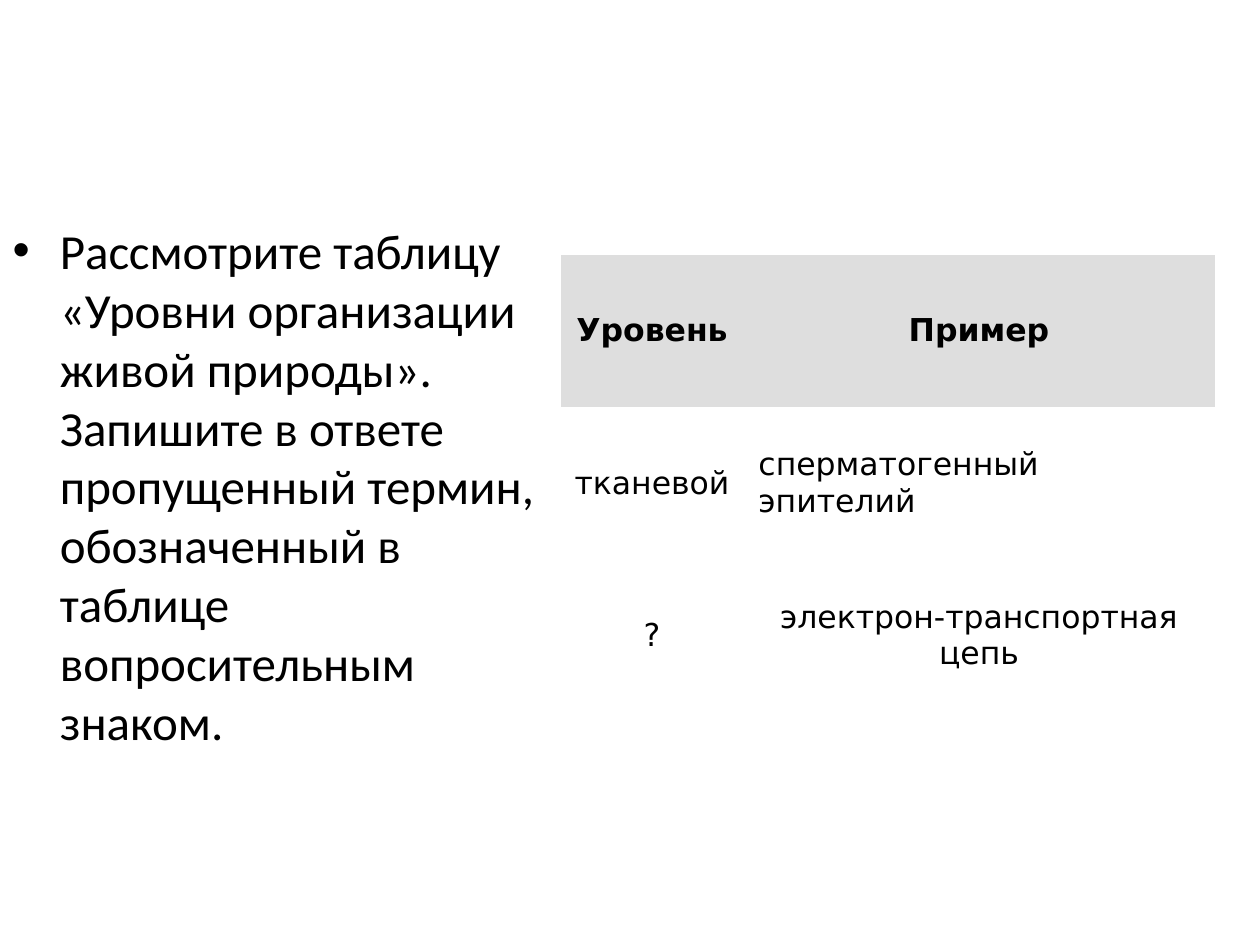
import pptx
import pptx.util
import pptx.dml.color
import pptx.enum.text

theme = {
    "text": pptx.dml.color.RGBColor.from_string("000000"),
    "header": pptx.dml.color.RGBColor.from_string("DEDEDE"),
    "cell": pptx.dml.color.RGBColor.from_string("FFFFFF"),
    "body_font": "Calibri",
    "table_font": "DejaVu Sans",
    "body_size": pptx.util.Pt(28),
    "table_size": pptx.util.Pt(18),
}
NO_STYLE_NO_GRID = "{2D5ABB26-0587-4C30-8999-92F81FD0307C}"
inch = pptx.util.Inches
align = pptx.enum.text.PP_ALIGN


def format_run(r, font, size, bold=False):
    r.font.name = font
    r.font.size = size
    r.font.bold = bold
    r.font.color.rgb = theme["text"]


prs = pptx.Presentation()
prs.slide_width, prs.slide_height = inch(10), inch(7.5)
s = prs.slides.add_slide(prs.slide_layouts[1])
title = s.shapes.title
title.element.getparent().remove(title.element)

body = s.placeholders[1]
body.left, body.top = 0, inch(1.7)
body.width, body.height = inch(4.42), inch(4.95)
tf = body.text_frame
tf.text = (
    "Рассмотрите таблицу «Уровни организации живой природы». "
    "Запишите в ответе пропущенный термин, обозначенный в таблице "
    "вопросительным знаком."
)
p = tf.paragraphs[0]
p.space_before = pptx.util.Pt(0)
format_run(p.runs[0], theme["body_font"], theme["body_size"])

rows = [
    ("Уровень", "Пример"),
    ("тканевой", "сперматогенный эпителий"),
    ("?", "электрон-транспортная цепь"),
]
col_widths = [inch(1.45), inch(3.74)]
col_margins = [inch(0.1), inch(0.12)]
row_height = inch(1.21)

frame = s.shapes.add_table(
    len(rows), len(col_widths), inch(4.45), inch(2.02),
    sum(col_widths), row_height * len(rows),
)
table = frame.table
table.horz_banding = False
table._tbl.tblPr[0].text = NO_STYLE_NO_GRID
for column, width in zip(table.columns, col_widths):
    column.width = width

for i, row in enumerate(rows):
    table.rows[i].height = row_height
    for j, text in enumerate(row):
        cell = table.cell(i, j)
        cell.fill.solid()
        cell.fill.fore_color.rgb = theme["header" if i == 0 else "cell"]
        cell.vertical_anchor = pptx.enum.text.MSO_ANCHOR.MIDDLE
        cell.margin_left = cell.margin_right = col_margins[j]
        cell.text_frame.text = text
        p = cell.text_frame.paragraphs[0]
        p.alignment = align.LEFT if (i, j) == (1, 1) else align.CENTER
        format_run(p.runs[0], theme["table_font"], theme["table_size"], i == 0)

prs.save("out.pptx")
